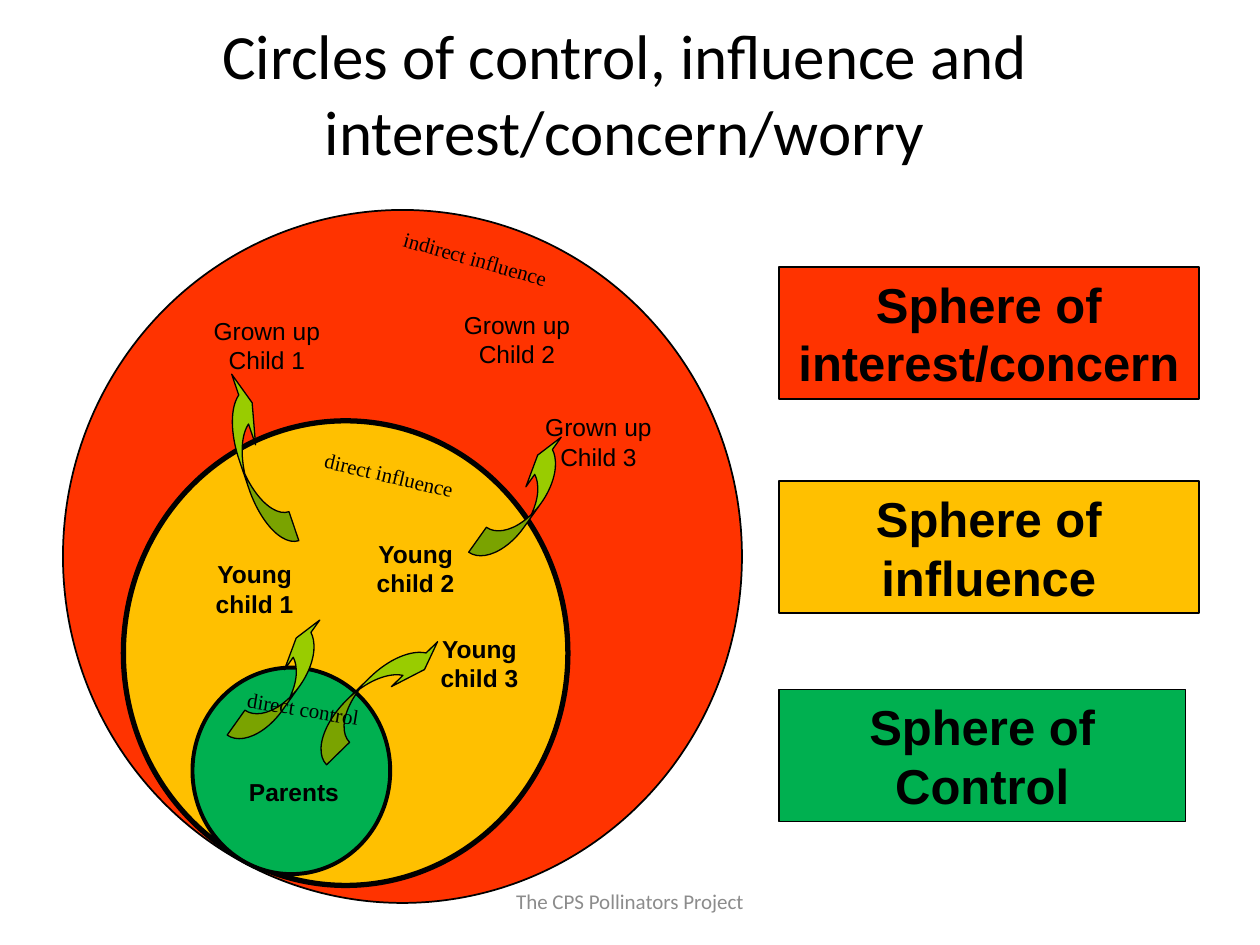
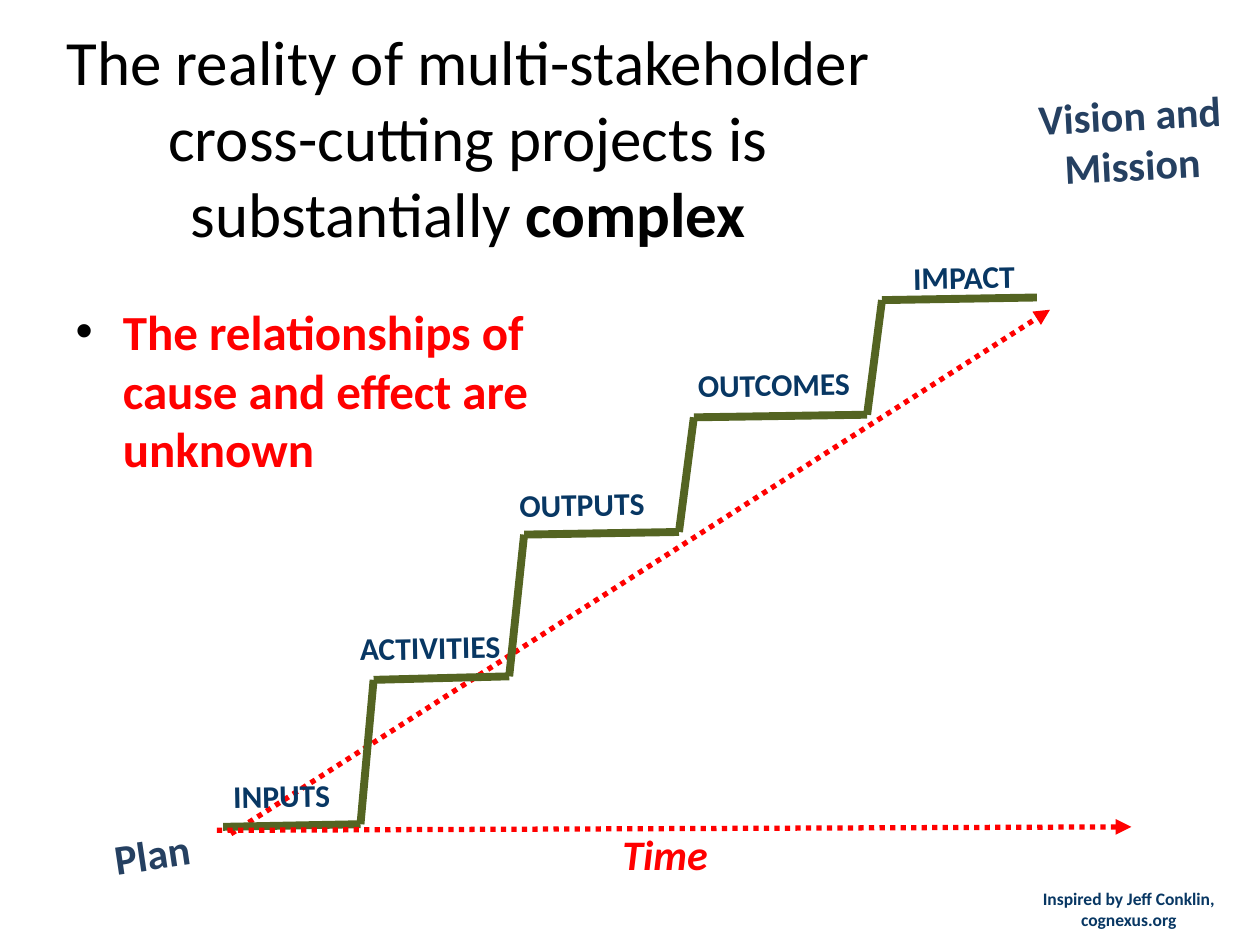
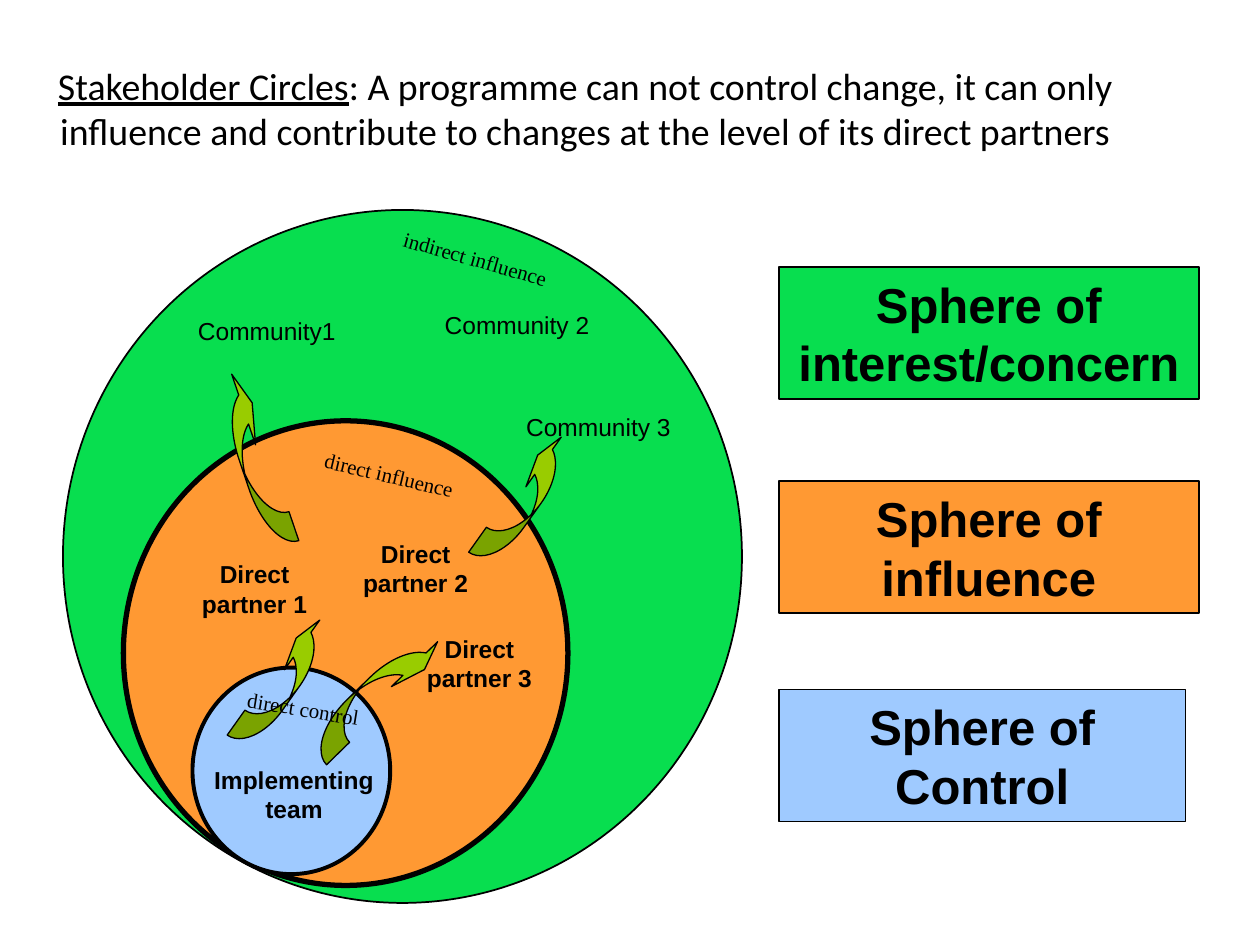
"""Build three slides on spheres of control and project complexity."""
from dataclasses import dataclass
from itertools import pairwise

from lxml import etree
from pptx import Presentation
from pptx.dml.color import RGBColor
from pptx.enum.dml import MSO_LINE
from pptx.enum.shapes import MSO_CONNECTOR, MSO_SHAPE
from pptx.enum.text import MSO_ANCHOR, MSO_AUTO_SIZE, PP_ALIGN
from pptx.oxml.ns import qn
from pptx.util import Pt

LEFT, CENTER, RIGHT = PP_ALIGN.LEFT, PP_ALIGN.CENTER, PP_ALIGN.RIGHT
TOP, MIDDLE = MSO_ANCHOR.TOP, MSO_ANCHOR.MIDDLE
OVAL, RECTANGLE = MSO_SHAPE.OVAL, MSO_SHAPE.RECTANGLE
CURVE_UP, CURVE_DOWN = MSO_SHAPE.CURVED_UP_ARROW, MSO_SHAPE.CURVED_DOWN_ARROW
STRAIGHT, DOTTED = MSO_CONNECTOR.STRAIGHT, MSO_LINE.ROUND_DOT
CONTENT_LAYOUT, TITLE_LAYOUT = 1, 5


@dataclass(frozen=True)
class Theme:
    heading_font: str = "Calibri"
    label_font: str = "Arial"
    zone_font: str = "Times New Roman"
    ink: str = "000000"
    footer: str = "8C8C8C"
    alert: str = "FF0000"
    stair: str = "546422"
    step: str = "083763"
    goal: str = "254061"
    swoosh: str = "99CC00"
    family: tuple = ("FF3300", "FFC000", "00B050")
    programme: tuple = ("08DE4F", "FF9933", "9FCAFF")
    title_size: float = 36
    statement_size: float = 21.6
    sphere_size: float = 28
    goal_size: float = 24
    step_size: float = 18
    label_size: float = 14
    small_size: float = 12
    credit_size: float = 10


class Deck:
    """Hold the theme and the current slide, and draw each kind of element."""

    def __init__(self, theme):
        self.theme = theme
        self.presentation = Presentation()
        self.presentation.slide_width = Pt(720)
        self.presentation.slide_height = Pt(540)
        self.slide = None

    def new_slide(self, layout):
        layouts = self.presentation.slide_layouts
        self.slide = self.presentation.slides.add_slide(layouts[layout])

    def place(self, shape, box):
        shape.left, shape.top, shape.width, shape.height = map(Pt, box)

    def format(self, frame, size, font, color=None, bold=None, italic=None,
               align=CENTER, anchor=TOP, wrap=True):
        frame.word_wrap = wrap
        frame.auto_size = MSO_AUTO_SIZE.NONE
        frame.vertical_anchor = anchor
        for paragraph in frame.paragraphs:
            paragraph.alignment = align
            paragraph.space_before = Pt(0)
            style = paragraph.font
            style.size, style.name = Pt(size), font
            style.bold, style.italic = bold, italic
            style.color.rgb = RGBColor.from_string(color or self.theme.ink)

    def title(self, box, runs, size, anchor=TOP):
        heading = self.slide.shapes.title
        self.place(heading, box)
        frame = heading.text_frame
        for text, emphasis in runs:
            run = frame.paragraphs[0].add_run()
            run.text = text
            if emphasis:
                setattr(run.font, emphasis, True)
        self.format(frame, size, self.theme.heading_font, anchor=anchor)
        return frame

    def bullet(self, box, text, size, color):
        body = self.slide.placeholders[1]
        self.place(body, box)
        body.text_frame.text = text
        properties = body.text_frame.paragraphs[0]._p.get_or_add_pPr()
        tint = etree.SubElement(properties, qn("a:buClr"))
        etree.SubElement(tint, qn("a:srgbClr"), val=self.theme.ink)
        etree.SubElement(properties, qn("a:buFont"), typeface="Arial")
        etree.SubElement(properties, qn("a:buChar"), char="•")
        self.format(body.text_frame, size, self.theme.heading_font, color,
                    bold=True, align=LEFT)

    def label(self, box, text, size, font, rotation=0, **style):
        note = self.slide.shapes.add_textbox(*map(Pt, box))
        note.rotation = rotation
        note.text_frame.text = text
        self.format(note.text_frame, size, font, **style)

    def shape(self, kind, box, fill, weight, rotation=0, adjustments=()):
        figure = self.slide.shapes.add_shape(kind, *map(Pt, box))
        figure.shadow.inherit = False
        figure.rotation = rotation
        figure.fill.solid()
        figure.fill.fore_color.rgb = RGBColor.from_string(fill)
        figure.line.color.rgb = RGBColor.from_string(self.theme.ink)
        figure.line.width = Pt(weight)
        for index, value in enumerate(adjustments):
            figure.adjustments[index] = value
        return figure

    def line(self, start, end, color, weight, arrow=False):
        link = self.slide.shapes.add_connector(STRAIGHT, *map(Pt, start + end))
        link.line.color.rgb = RGBColor.from_string(color)
        link.line.width = Pt(weight)
        if arrow:
            link.line.dash_style = DOTTED
            etree.SubElement(link.line._get_or_add_ln(), qn("a:tailEnd"), type="triangle")
        etree.SubElement(link._element.spPr, qn("a:effectLst"))

    def spheres(self, colors, core, core_top, partners, outsiders):
        theme = self.theme
        circles = [((36, 120, 388, 396), 1), ((70.5, 240.5, 254, 265.5), 3),
                   ((110, 381.5, 113, 118), 2.25)]
        for (box, weight), color in zip(circles, colors):
            self.shape(OVAL, box, color, weight)

        self.label((106.5, core_top, 123, 42), core, theme.label_size,
                   theme.label_font, bold=True)
        for (left, top), name in zip([(99.5, 316), (191.5, 304.5), (228, 358.5)], partners):
            self.label((left, top, 92, 45), name, theme.label_size,
                       theme.label_font, bold=True)
        places = [(98, 177, 109), (239, 173.5, 113), (282, 232, 120)]
        for (left, top, width), name in zip(places, outsiders):
            self.label((left, top, width, 34.5), name, theme.label_size, theme.label_font)

        rising = (0.997, 1.994, 0.287)
        swooshes = [
            (CURVE_UP, (119, 381.5, 85.5, 17.5), 305.4, rising),
            (CURVE_DOWN, (166.5, 387.5, 96.5, 18.5), 315.8, (0.994, 1.988, 0.333)),
            (CURVE_UP, (257, 277, 85.5, 17.5), 305.4, rising),
            (CURVE_DOWN, (93.5, 253.5, 104.5, 17.5), 251.3, (1.218, 2.436, 0.333)),
        ]
        for kind, box, rotation, adjustments in swooshes:
            self.shape(kind, box, theme.swoosh, 0.75, rotation, adjustments)

        zones = [((216.5, 137, 110, 22.5), "indirect influence", 15.8),
                 ((173, 260.5, 98.5, 22.5), "direct influence", 13.3),
                 ((131, 394, 80.5, 47.5), "direct control", 9.2)]
        for box, text, rotation in zones:
            self.label(box, text, theme.small_size, theme.zone_font, rotation, wrap=False)

        legend = [("interest/concern", 152.5, 240), ("influence", 275, 240),
                  ("Control", 394, 232.5)]
        for (name, top, width), color in zip(legend, colors):
            key = self.shape(RECTANGLE, (445, top, width, 75.5), color, 1)
            key.text_frame.text = f"Sphere of {name}"
            self.format(key.text_frame, theme.sphere_size, theme.label_font,
                        bold=True, anchor=MIDDLE)


def family_slide(deck):
    theme = deck.theme
    deck.new_slide(TITLE_LAYOUT)
    deck.title((90, 6, 534, 84),
               [("Circles of control, influence and interest/concern/worry", None)],
               theme.title_size)
    deck.label((246, 500.5, 228, 29), "The CPS Pollinators Project", theme.small_size,
               theme.heading_font, color=theme.footer, anchor=MIDDLE)
    deck.spheres(theme.family, "Parents", 440.5,
                 [f"Young child {n}" for n in (1, 2, 3)],
                 [f"Grown up\nChild {n}" for n in (1, 2, 3)])


def complexity_slide(deck):
    theme = deck.theme
    font = theme.heading_font
    deck.new_slide(CONTENT_LAYOUT)
    deck.title((0, 9.5, 535, 68.5),
               [("The reality of multi-stakeholder cross-cutting projects is substantially ", None),
                ("complex", "bold")], theme.title_size)
    deck.bullet((36, 168.5, 338, 356), "The relationships of cause and effect are unknown",
                theme.sphere_size, theme.alert)

    deck.line((132, 476.5), (600, 177), theme.alert, 3, arrow=True)
    deck.label((48, 469.5, 80.5, 55.5), "Plan", theme.goal_size, font, 351.6,
               color=theme.goal, bold=True, wrap=False)

    corners = [(127.5, 472.5), (206, 471), (213.5, 388.5), (291, 386.5), (299.5, 305.5),
               (388, 304), (396.5, 238.5), (495.5, 237), (504, 171.5), (592.5, 170)]
    for start, end in pairwise(corners):
        deck.line(start, end, theme.stair, 4.5)
    steps = [("INPUTS", 101.5, 440, 119, CENTER), ("ACTIVITIES", 170, 355.5, 123, RIGHT),
             ("OUTPUTS", 275, 273.5, 115, CENTER), ("OUTCOMES", 390, 205, 104.5, CENTER),
             ("IMPACT", 482.5, 144, 104.5, RIGHT)]
    for name, left, top, width, align in steps:
        deck.label((left, top, width, 29), name, theme.step_size, font, 359,
                   color=theme.step, bold=True, align=align)

    deck.label((570, 504, 150, 36), "Inspired by Jeff Conklin, cognexus.org",
               theme.credit_size, font, color=theme.step, bold=True)
    deck.label((348.5, 470, 82, 36.5), "Time", theme.goal_size, font,
               color=theme.alert, bold=True, italic=True, align=LEFT)
    deck.line((124, 474.5), (646.5, 472.5), theme.alert, 3, arrow=True)
    deck.label((589, 47, 119.5, 157.5), "Vision and\nMission", theme.goal_size, font, 357,
               color=theme.goal, bold=True, wrap=False)


def stakeholder_slide(deck):
    theme = deck.theme
    deck.new_slide(TITLE_LAYOUT)
    statement = deck.title(
        (0, 43, 669, 63.5),
        [("Stakeholder Circles", "underline"),
         (": A programme can not control change, it can only influence and contribute "
          "to changes at the level of its direct partners", None)],
        theme.statement_size, MIDDLE)
    statement.margin_bottom = Pt(30)
    deck.spheres(theme.programme, "Implementing team", 433.5,
                 [f"Direct partner {n}" for n in (1, 2, 3)],
                 ["Community1", "Community 2", "Community 3"])


def main():
    deck = Deck(Theme())
    family_slide(deck)
    complexity_slide(deck)
    stakeholder_slide(deck)
    deck.presentation.save("out.pptx")


if __name__ == "__main__":
    main()
